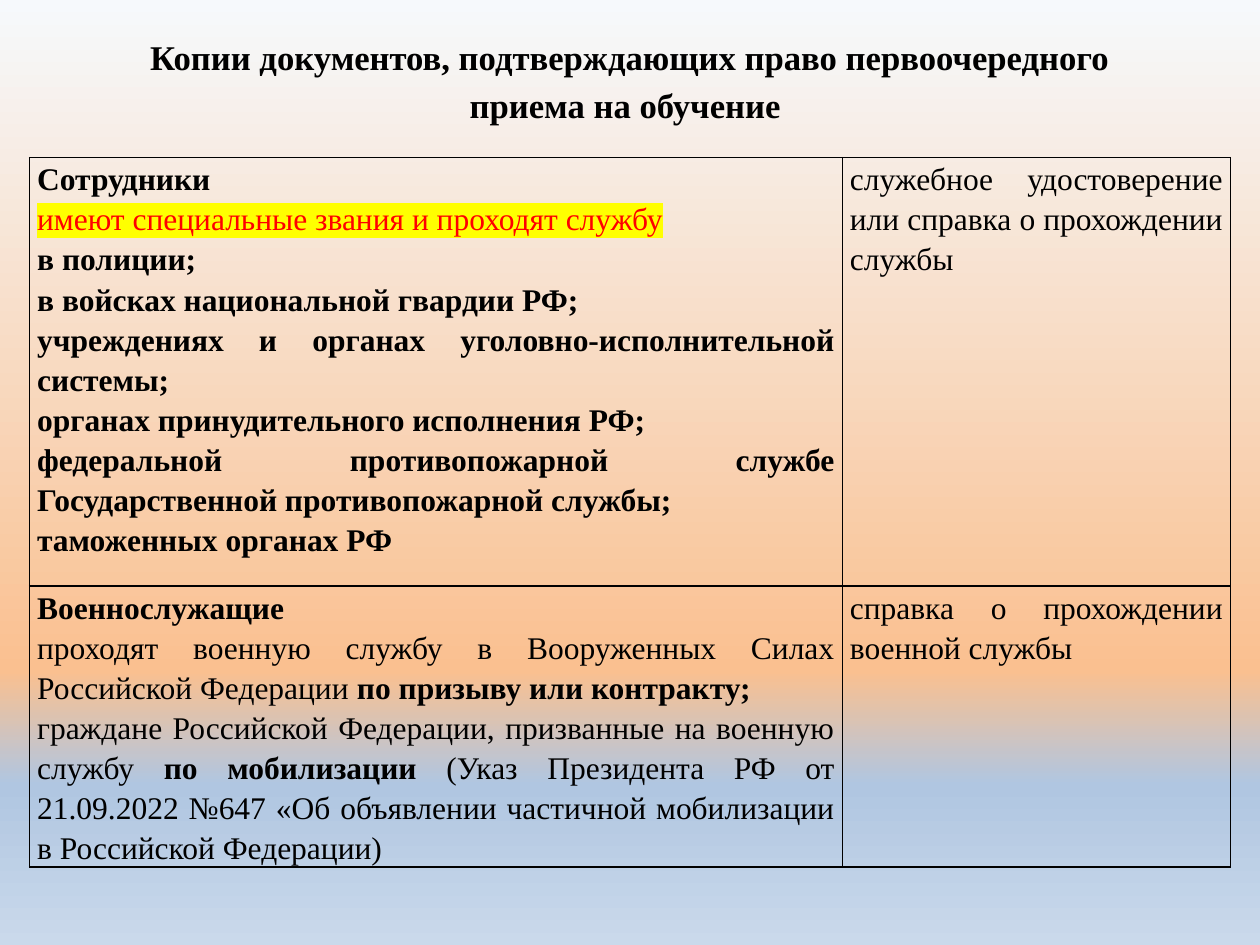
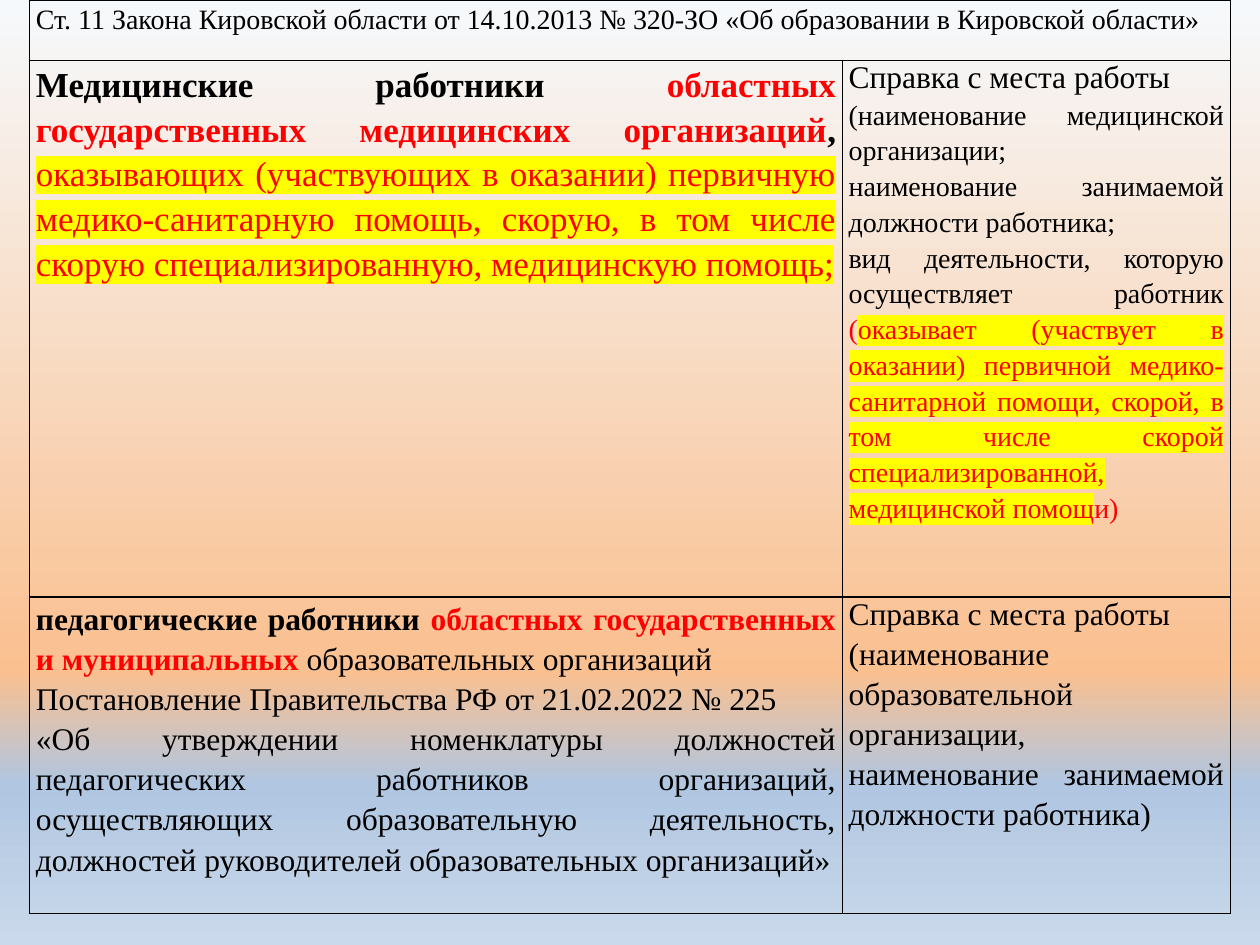
"""Build two slides on the papers that confirm priority school admission."""
from dataclasses import dataclass

from lxml import etree
from pptx import Presentation
from pptx.dml.color import RGBColor
from pptx.enum.text import MSO_ANCHOR, MSO_AUTO_SIZE, PP_ALIGN
from pptx.oxml.ns import qn
from pptx.util import Inches, Pt

BLACK = RGBColor(0x00, 0x00, 0x00)
RED = RGBColor(0xFF, 0x00, 0x00)
YELLOW = RGBColor(0xFF, 0xFF, 0x00)
SKY = {
    0: RGBColor(0xF6, 0xF9, 0xFC),
    71: RGBColor(0xFA, 0xC0, 0x90),
    83: RGBColor(0xB0, 0xC6, 0xE1),
    100: RGBColor(0xCA, 0xD9, 0xEB),
}
FONT = "Times New Roman"
CENTER, JUSTIFY = PP_ALIGN.CENTER, PP_ALIGN.JUSTIFY
MIDDLE = MSO_ANCHOR.MIDDLE
NO_FIT = MSO_AUTO_SIZE.NONE
TITLE_ONLY, BLANK = 5, 6
LEFT, COLS = Inches(0.235), (Inches(6.45), Inches(3.08))
LEADING = 1.15
SIDES = ("lnL", "lnR", "lnT", "lnB")
TITLE_BOX = {"left": Inches(1), "top": Inches(0.35),
             "width": Inches(7.99), "height": Inches(0.53)}
TITLE_FIT = {"word_wrap": True, "auto_size": NO_FIT, "vertical_anchor": MIDDLE}
TABLE_LOOK = {"first_row": False, "horz_banding": False}


@dataclass
class Bit:
    text: str
    bold: bool = False
    color: RGBColor = BLACK
    mark: bool = False


@dataclass
class Para:
    bits: list[Bit]
    size: float = 18
    leading: float = LEADING


@dataclass
class Grid:
    top: float
    inset: float
    rows: list[float]
    cells: list[list[list[Para]]]


def plain(text: str, size: float = 18, leading: float = LEADING) -> Para:
    return Para([Bit(text)], size, leading)


def strong(text: str, size: float = 18) -> Para:
    return Para([Bit(text, bold=True)], size)


def marked(text: str) -> Bit:
    return Bit(text, color=RED, mark=True)


def apply(item, values: dict) -> None:
    for name, value in values.items():
        setattr(item, name, value)


def add_color(parent, color: RGBColor) -> None:
    etree.SubElement(parent, qn("a:srgbClr"), val=str(color))


def paint_sky(master) -> None:
    fill = master.background.fill
    fill.gradient()
    fill.gradient_angle = 270
    stops = next(master.element.iter(qn("a:gsLst")))
    for old in list(stops):
        stops.remove(old)
    for place, color in SKY.items():
        add_color(etree.SubElement(stops, qn("a:gs"), pos=str(place * 1000)), color)


def mark_run(run) -> None:
    mark = etree.Element(qn("a:highlight"))
    add_color(mark, YELLOW)
    run.font._element.find(qn("a:solidFill")).addnext(mark)


def add_bit(line, bit: Bit, size: float) -> None:
    run = line.add_run()
    run.text = bit.text
    apply(run.font, {"name": FONT, "size": Pt(size), "bold": bit.bold})
    run.font.color.rgb = bit.color
    if bit.mark:
        mark_run(run)


def write(frame, paras: list[Para], align: PP_ALIGN) -> None:
    for index, para in enumerate(paras):
        line = frame.add_paragraph() if index else frame.paragraphs[0]
        apply(line, {"alignment": align, "line_spacing": para.leading,
                     "space_before": Pt(0), "space_after": Pt(0)})
        for bit in para.bits:
            add_bit(line, bit, para.size)


def style_cell(cell, inset: float) -> None:
    apply(cell, {"margin_left": Inches(inset), "margin_right": Inches(inset),
                 "margin_top": 0, "margin_bottom": 0})
    props = cell._tc.get_or_add_tcPr()
    for side in SIDES:
        line = etree.SubElement(props, qn("a:" + side), w=str(Pt(1)))
        add_color(etree.SubElement(line, qn("a:solidFill")), BLACK)
    cell.fill.background()


def add_grid(slide, grid: Grid) -> None:
    heights = [Inches(row) for row in grid.rows]
    table = slide.shapes.add_table(len(heights), len(COLS), LEFT, Inches(grid.top),
                                   sum(COLS), sum(heights)).table
    apply(table, TABLE_LOOK)
    for column, width in zip(table.columns, COLS):
        column.width = width
    for row, height in zip(table.rows, heights):
        row.height = height
    for cell in table.iter_cells():
        style_cell(cell, grid.inset)
    for r, row in enumerate(grid.cells):
        if len(row) < len(COLS):
            table.cell(r, 0).merge(table.cell(r, len(COLS) - 1))
        for c, paras in enumerate(row):
            write(table.cell(r, c).text_frame, paras, JUSTIFY)


def add_title(slide, text: str) -> None:
    title = slide.shapes.title
    apply(title, TITLE_BOX)
    apply(title.text_frame, TITLE_FIT)
    write(title.text_frame, [strong(text, 19.8)], CENTER)


HEADING = "Копии документов, подтверждающих право первоочередного приема на обучение "

STAFF = [
    strong("Сотрудники"),
    Para([marked("имеют специальные звания и проходят службу")]),
    *map(strong, (
        "в полиции;",
        "в войсках национальной гвардии РФ;",
        "учреждениях и органах уголовно-исполнительной системы;",
        "органах принудительного исполнения РФ;",
        "федеральной противопожарной службе Государственной противопожарной службы;",
        "таможенных органах РФ",
    )),
]
STAFF_PROOF = [plain("служебное удостоверение или справка о прохождении службы")]

TROOPS = [
    strong("Военнослужащие"),
    Para([Bit("проходят военную службу в Вооруженных Силах Российской Федерации "),
          Bit("по призыву или контракту;", bold=True)]),
    Para([Bit("граждане Российской Федерации, призванные на военную службу "),
          Bit("по мобилизации", bold=True),
          Bit(" (Указ Президента РФ от 21.09.2022 №647 «Об объявлении частичной "
              "мобилизации в Российской Федерации)")]),
]
TROOPS_PROOF = [plain("справка о прохождении военной службы")]

LAW = [plain("Ст. 11 Закона Кировской области от 14.10.2013 № 320-ЗО "
             "«Об образовании в Кировской области»", 16)]
WORK_NOTE = plain("Справка с места работы", leading=1)

MEDICS = [
    Para([Bit("Медицинские работники ", bold=True),
          Bit("областных государственных медицинских организаций", True, RED),
          Bit(", ", bold=True),
          marked("оказывающих (участвующих в оказании) первичную медико-санитарную "
                 "помощь, скорую, в том числе скорую специализированную, "
                 "медицинскую помощь;")], 20),
]
MEDICS_PROOF = [
    WORK_NOTE,
    plain("(наименование медицинской организации;", 16),
    plain("наименование занимаемой должности работника;", 16),
    Para([Bit("вид деятельности, которую осуществляет работник "),
          Bit("(", color=RED),
          marked("оказывает (участвует в оказании) первичной медико-санитарной "
                 "помощи, скорой, в том числе скорой специализированной, "
                 "медицинской помощ"),
          Bit("и)", color=RED)], 16),
]

TUTORS = [
    Para([Bit("педагогические работники ", bold=True),
          Bit("областных государственных и муниципальных", True, RED),
          Bit(" образовательных организаций")]),
    plain("Постановление Правительства РФ от 21.02.2022 № 225"),
    plain("«Об утверждении номенклатуры должностей педагогических работников "
          "организаций, осуществляющих образовательную деятельность, должностей "
          "руководителей образовательных организаций»"),
]
TUTORS_PROOF = [
    WORK_NOTE,
    plain("(наименование образовательной организации,"),
    plain("наименование занимаемой должности работника)"),
]

SERVICE_GRID = Grid(top=1.25, inset=0.06, rows=[3.4, 2.23],
                    cells=[[STAFF, STAFF_PROOF], [TROOPS, TROOPS_PROOF]])
REGION_GRID = Grid(top=0, inset=0.05, rows=[0.48, 4.26, 2.51],
                   cells=[[LAW], [MEDICS, MEDICS_PROOF], [TUTORS, TUTORS_PROOF]])


def main() -> None:
    deck = Presentation()
    apply(deck, {"slide_width": Inches(10), "slide_height": Inches(7.5)})
    paint_sky(deck.slide_master)
    service = deck.slides.add_slide(deck.slide_layouts[TITLE_ONLY])
    add_title(service, HEADING)
    add_grid(service, SERVICE_GRID)
    region = deck.slides.add_slide(deck.slide_layouts[BLANK])
    add_grid(region, REGION_GRID)
    deck.save("out.pptx")


if __name__ == "__main__":
    main()
